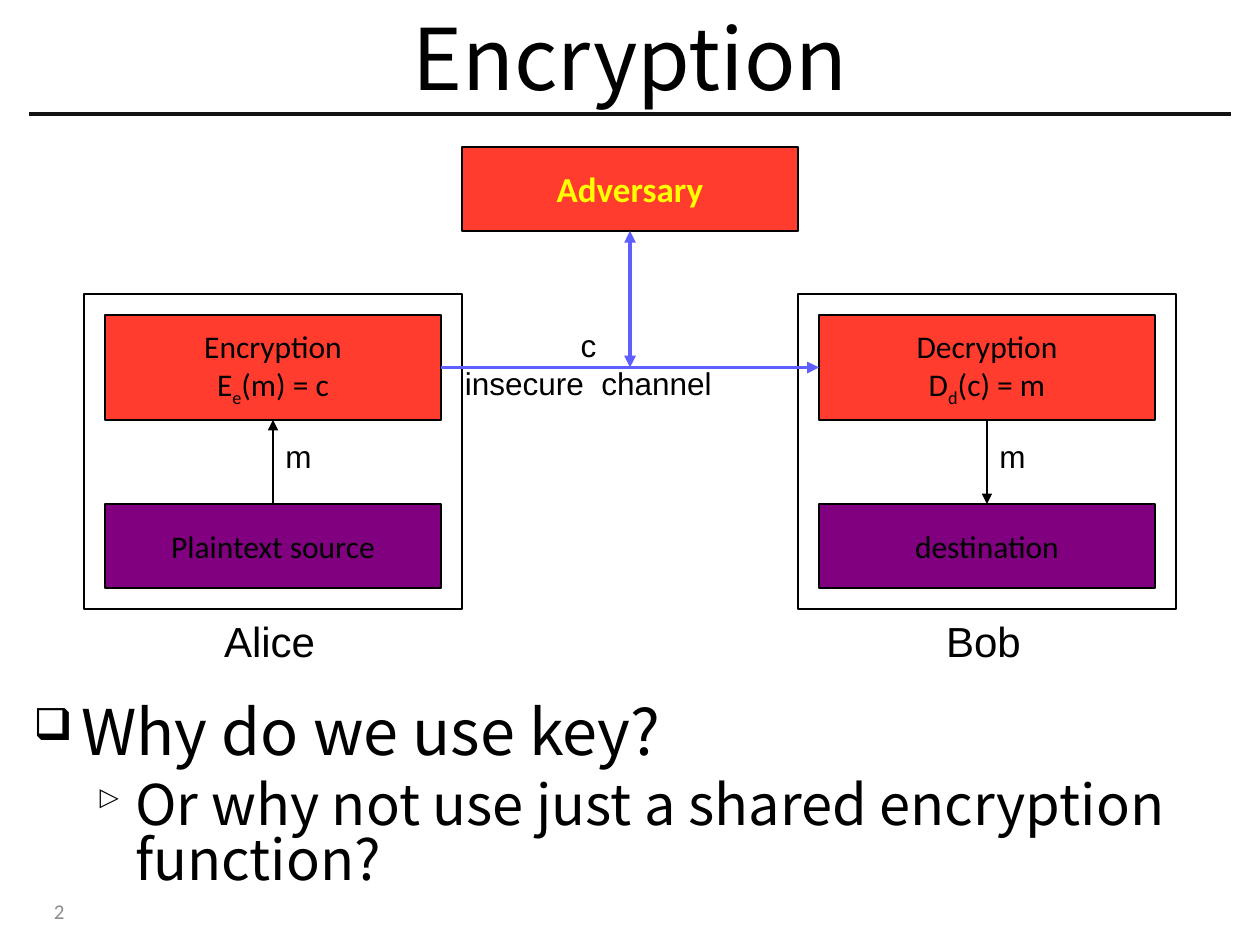
from dataclasses import dataclass
from typing import Any

from lxml import etree
from pptx import Presentation
from pptx import util as u
from pptx.dml.color import RGBColor
from pptx.enum import shapes, text
from pptx.oxml.ns import qn

COLUMNS, ROWS = 60, 45


def color(value):
    """Turn a hex string into a colour."""
    return RGBColor.from_string(value)


def write(paragraph, content, size=18, font="Calibri", ink="000000", bold=False, baseline=0):
    """Append one formatted run to a paragraph."""
    run = paragraph.add_run()
    run.text = content
    run.font.size = u.Pt(size)
    run.font.name = font
    run.font.bold = bold
    run.font.color.rgb = color(ink)
    properties = run.font._element
    for tag in ("a:ea", "a:cs"):
        etree.SubElement(properties, qn(tag), typeface=font)
    if baseline:
        properties.set("baseline", str(baseline * 1000))


def add_bullet(paragraph, symbol, margin, hanging):
    """Give a paragraph a hanging bullet at 70 percent size."""
    properties = paragraph._p.get_or_add_pPr()
    properties.set("marL", str(u.Inches(margin)))
    properties.set("indent", str(-u.Inches(hanging)))
    etree.SubElement(properties, qn("a:buSzPct"), val="70000")
    etree.SubElement(properties, qn("a:buChar"), char=symbol)


@dataclass
class Diagram:
    """Hold the slide, its grid and the shared style."""

    presentation: Any
    slide: Any
    red: str = "FF3C2D"
    purple: str = "800080"
    blue: str = "5F5FFF"
    black: str = "000000"
    heading_font: str = "Noto Sans CJK KR"
    label_font: str = "Arial"

    def place(self, column, row):
        """Convert grid columns and rows to slide lengths."""
        return (int(self.presentation.slide_width * column / COLUMNS),
                int(self.presentation.slide_height * row / ROWS))

    def box(self, column, row, width, height, fill=None, lines=(), **style):
        """Add an outlined rectangle with centred lines of runs."""
        shape = self.slide.shapes.add_shape(
            shapes.MSO_SHAPE.RECTANGLE, *self.place(column, row), *self.place(width, height))
        shape.shadow.inherit = False
        shape.line.color.rgb = color(self.black)
        shape.line.width = u.Pt(1)
        if fill:
            shape.fill.solid()
            shape.fill.fore_color.rgb = color(fill)
        else:
            shape.fill.background()
        frame = shape.text_frame
        frame.word_wrap = False
        frame.vertical_anchor = text.MSO_ANCHOR.MIDDLE
        for index, runs in enumerate(lines):
            paragraph = frame.add_paragraph() if index else frame.paragraphs[0]
            paragraph.alignment = text.PP_ALIGN.CENTER
            for content, baseline in runs:
                write(paragraph, content, baseline=baseline, **style)

    def label(self, column, row, width, height, lines, align="CENTER", anchor="TOP", **style):
        """Add a text box and return its text frame."""
        frame = self.slide.shapes.add_textbox(
            *self.place(column, row), *self.place(width, height)).text_frame
        frame.word_wrap = True
        frame.vertical_anchor = text.MSO_ANCHOR[anchor]
        for index, content in enumerate(lines):
            paragraph = frame.add_paragraph() if index else frame.paragraphs[0]
            paragraph.alignment = text.PP_ALIGN[align]
            write(paragraph, content, **style)
        return frame

    def line(self, start, end, ink, width=1, heads=()):
        """Add a straight line with optional triangle ends."""
        connector = self.slide.shapes.add_connector(
            shapes.MSO_CONNECTOR.STRAIGHT, *self.place(*start), *self.place(*end))
        connector.line.color.rgb = color(ink)
        connector.line.width = u.Pt(width)
        outline = connector.line._get_or_add_ln()
        for head in heads:
            etree.SubElement(outline, qn(f"a:{head}"), type="triangle")
        etree.SubElement(connector._element.spPr, qn("a:effectLst"))

    def party(self, column, name, name_column, letter, subscript, operation, formula, store, upward):
        """Add one party: panel, cipher box, text store, arrow and labels."""
        middle = column + 9
        self.box(column, 14, 18, 15)
        self.box(column + 1, 24, 16, 4, self.purple, [[(store, 0)]])
        self.box(column + 1, 15, 16, 5, self.red,
                 [[(operation, 0)], [(letter, 0), (subscript, -25), (formula, 0)]])
        ends = [(middle, 20), (middle, 24)]
        self.line(*(reversed(ends) if upward else ends), self.black, heads=["tailEnd"])
        self.label(middle, 20.5, 2.67, 2.4, ["m"], "LEFT", font=self.label_font)
        self.label(name_column, 29, 6.67, 3, [name], size=24, font=self.label_font)

    def questions(self):
        """Add the bulleted question and its follow-up."""
        frame = self.label(1, 32.94, 58, 8.75, ["Why do we use key?"], "LEFT",
                           size=36, font=self.heading_font)
        frame.margin_top = u.Inches(0.11)
        first, second = frame.paragraphs[0], frame.add_paragraph()
        write(second, "Or why not use just a shared encryption function?",
              size=32, font=self.heading_font)
        second.level = 1
        second.space_before = u.Pt(8)
        for paragraph in (first, second):
            paragraph.line_spacing = 0.82
        add_bullet(first, "❑", 0.38, 0.38)
        add_bullet(second, "▹", 0.81, 0.31)

    def channel(self):
        """Add the adversary and the insecure channel between the parties."""
        self.line((21, 17.5), (39, 17.5), self.blue, 2.25, ["tailEnd"])
        frame = self.label(20.5, 15.25, 16, 4.2, ["c", "insecure  channel"], font=self.label_font)
        frame.paragraphs[0]._p.get_or_add_pPr().set("marR", str(u.Inches(0.16)))
        self.box(22, 7, 16, 4, self.red, [[("Adversary", 0)]], size=20, ink="FFFF00", bold=True)
        self.line((30, 11), (30, 17.5), self.blue, 2.25, ["headEnd", "tailEnd"])


def main():
    """Build and save the encryption slide."""
    presentation = Presentation()
    presentation.slide_width, presentation.slide_height = u.Inches(10), u.Inches(7.5)
    slide = presentation.slides.add_slide(presentation.slide_layouts[6])
    diagram = Diagram(presentation, slide)
    diagram.line((1.4, 5.45), (58.6, 5.45), "141314", 2.25)
    diagram.label(1, 0.05, 58, 5.3, ["Encryption"], anchor="MIDDLE",
                  size=48.6, font=diagram.heading_font)
    diagram.questions()
    diagram.label(1, 42.2, 2.67, 2.4, ["2"], "RIGHT", "MIDDLE", size=12, ink="8C8C8C")
    diagram.party(4, "Alice", 9.5, "E", "e", "Encryption", "(m) = c", "Plaintext source", True)
    diagram.party(38, "Bob", 43.5, "D", "d", "Decryption", "(c) = m", "destination", False)
    diagram.channel()
    presentation.save("out.pptx")


if __name__ == "__main__":
    main()
